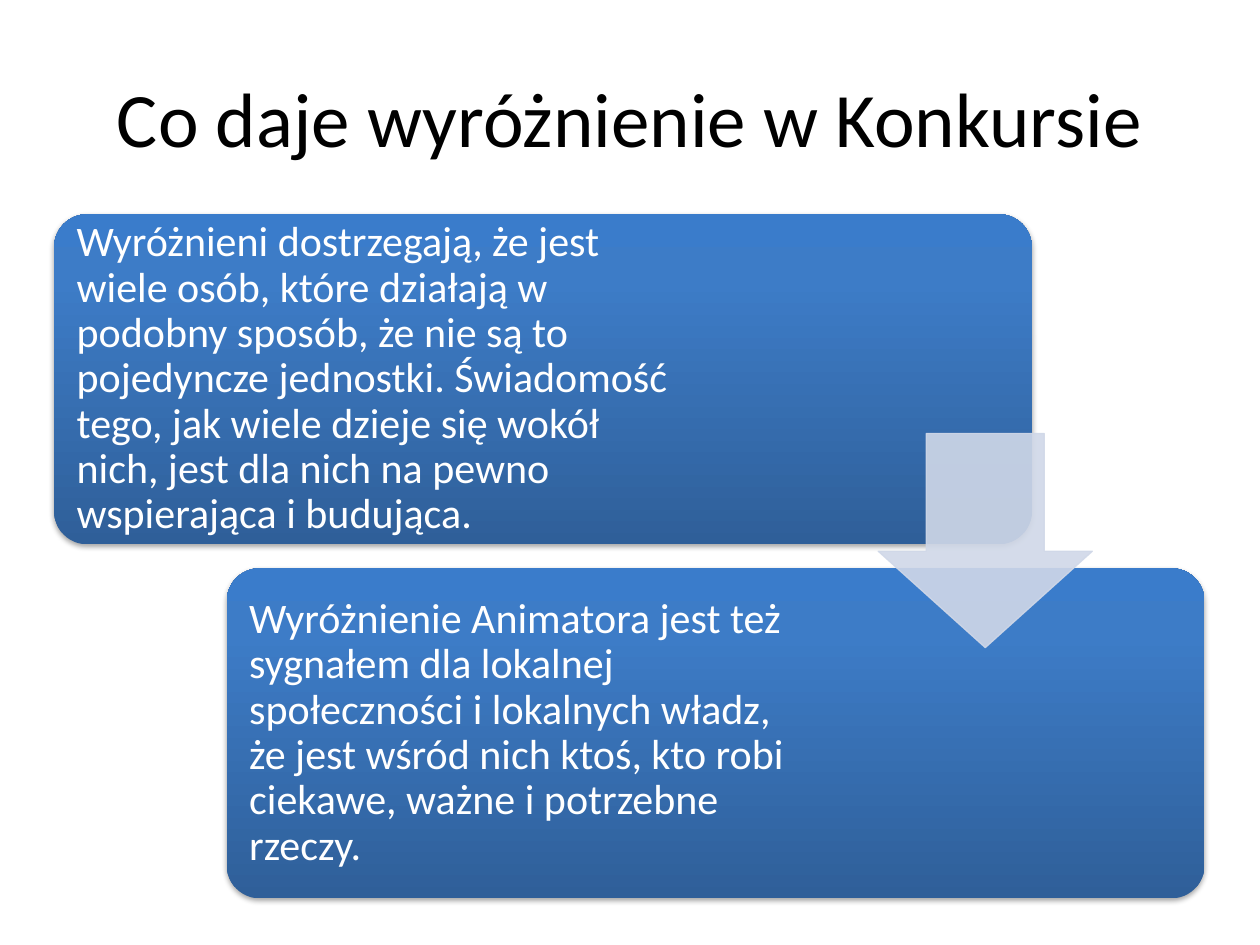
from dataclasses import dataclass

from lxml import etree
from pptx import Presentation
from pptx import util as u
from pptx.dml.color import RGBColor
from pptx.enum import shapes, text
from pptx.oxml.ns import qn

Inches, Pt = u.Inches, u.Pt


@dataclass(frozen=True)
class Theme:
    font: str = "Calibri"
    title_size: int = 44
    body_size: int = 24
    title_color: str = "000000"
    body_color: str = "FFFFFF"
    gradient: tuple = ((0, "2F5F99"), (80, "3D7CC7"), (100, "3A7CCB"))
    shadow_color: str = "000000"
    arrow_color: str = "D0D8E8"


THEME = Theme()

CARD_WIDTH, CARD_HEIGHT = 7.76, 2.62
CARD_LEFT, CARD_TOP = 0.43, 1.7
STEP_X, STEP_Y = 1.37, 2.81
TEXT_OFFSET = 0.08

# Wording and width of the text in each step
STEPS = (
    ("Wyróżnieni dostrzegają, że jest wiele osób, które działają w podobny "
     "sposób, że nie są to pojedyncze jednostki. Świadomość tego, jak wiele "
     "dzieje się wokół nich, jest dla nich na pewno wspierająca i budująca.",
     5.05),
    ("Wyróżnienie Animatora jest też sygnałem dla lokalnej społeczności i "
     "lokalnych władz, że jest wśród nich ktoś, kto robi ciekawe, ważne i "
     "potrzebne rzeczy.", 4.54),
)


def set_format(target, values):
    for name, value in values.items():
        setattr(target, name, value)


def add_color(parent, color, alpha=100):
    element = etree.SubElement(parent, qn("a:srgbClr"), val=color)
    if alpha < 100:
        etree.SubElement(element, qn("a:alpha"), val=str(alpha * 1000))


def add_text(slide, box, wording, size, color, paragraph_format, inset):
    text_box = slide.shapes.add_textbox(*map(Inches, box))
    frame = text_box.text_frame
    set_format(frame, {
        "word_wrap": True,
        "auto_size": text.MSO_AUTO_SIZE.NONE,
        "vertical_anchor": text.MSO_ANCHOR.MIDDLE,
        "margin_left": Inches(0.1),
        "margin_right": Inches(0.1),
        "margin_top": Inches(inset),
        "margin_bottom": Inches(inset),
    })
    paragraph = frame.paragraphs[0]
    set_format(paragraph, paragraph_format)
    run = paragraph.add_run()
    run.text = wording
    set_format(run.font, {"name": THEME.font, "size": Pt(size)})
    run.font.color.rgb = RGBColor.from_string(color)


def add_shape(slide, kind, box, adjustments):
    shape = slide.shapes.add_shape(kind, *map(Inches, box))
    shape.shadow.inherit = False
    for index, value in enumerate(adjustments):
        shape.adjustments[index] = value
    return shape


def fill_gradient(shape):
    """Run the theme gradient from the bottom of the shape to its top."""
    shape.fill.gradient()
    shape.fill.gradient_angle = 90
    stops = shape._element.spPr.find(".//" + qn("a:gsLst"))
    for stop in list(stops):
        stops.remove(stop)
    for position, color in THEME.gradient:
        stop = etree.SubElement(stops, qn("a:gs"), pos=str(position * 1000))
        add_color(stop, color)


def add_shadow(shape):
    effects = shape._element.spPr.find(qn("a:effectLst"))
    shadow = etree.SubElement(
        effects, qn("a:outerShdw"), blurRad=str(Pt(3.1)), dist=str(Pt(1.8)),
        dir=str(90 * 60000), rotWithShape="0")
    add_color(shadow, THEME.shadow_color, 35)


def add_title(slide, box):
    add_text(slide, box, "Co daje wyróżnienie w Konkursie", THEME.title_size,
             THEME.title_color, {"alignment": text.PP_ALIGN.CENTER}, 0.05)


def add_step(slide, box, wording, text_width):
    left, top, _, height = box
    card = add_shape(slide, shapes.MSO_SHAPE.ROUNDED_RECTANGLE, box, [0.1])
    fill_gradient(card)
    card.line.fill.background()
    add_shadow(card)
    text_area = (left + TEXT_OFFSET, top + TEXT_OFFSET,
                 text_width, height - 2 * TEXT_OFFSET)
    add_text(slide, text_area, wording, THEME.body_size, THEME.body_color, {
        "alignment": text.PP_ALIGN.LEFT,
        "line_spacing": 0.9,
        "space_after": Pt(0.35 * THEME.body_size),
    }, 0.1)


def add_step_arrow(slide, box):
    arrow = add_shape(slide, shapes.MSO_SHAPE.DOWN_ARROW, box, [0.55, 0.45])
    arrow.line.width = Pt(0.75)
    for fill in (arrow.fill, arrow.line.fill):
        fill.solid()
        fill.fore_color.rgb = RGBColor.from_string(THEME.arrow_color)
    for color in arrow._element.spPr.iter(qn("a:srgbClr")):
        etree.SubElement(color, qn("a:alpha"), val="90000")


def main():
    presentation = Presentation()
    presentation.slide_width = Inches(10)
    presentation.slide_height = Inches(7.5)
    slide = presentation.slides.add_slide(presentation.slide_layouts[6])

    add_title(slide, (0.5, 0.3, 9, 1.25))
    for index, (wording, text_width) in enumerate(STEPS):
        box = (CARD_LEFT + index * STEP_X, CARD_TOP + index * STEP_Y,
               CARD_WIDTH, CARD_HEIGHT)
        add_step(slide, box, wording, text_width)
    add_step_arrow(slide, (6.97, 3.44, 1.7, 1.7))

    presentation.save("out.pptx")


if __name__ == "__main__":
    main()
